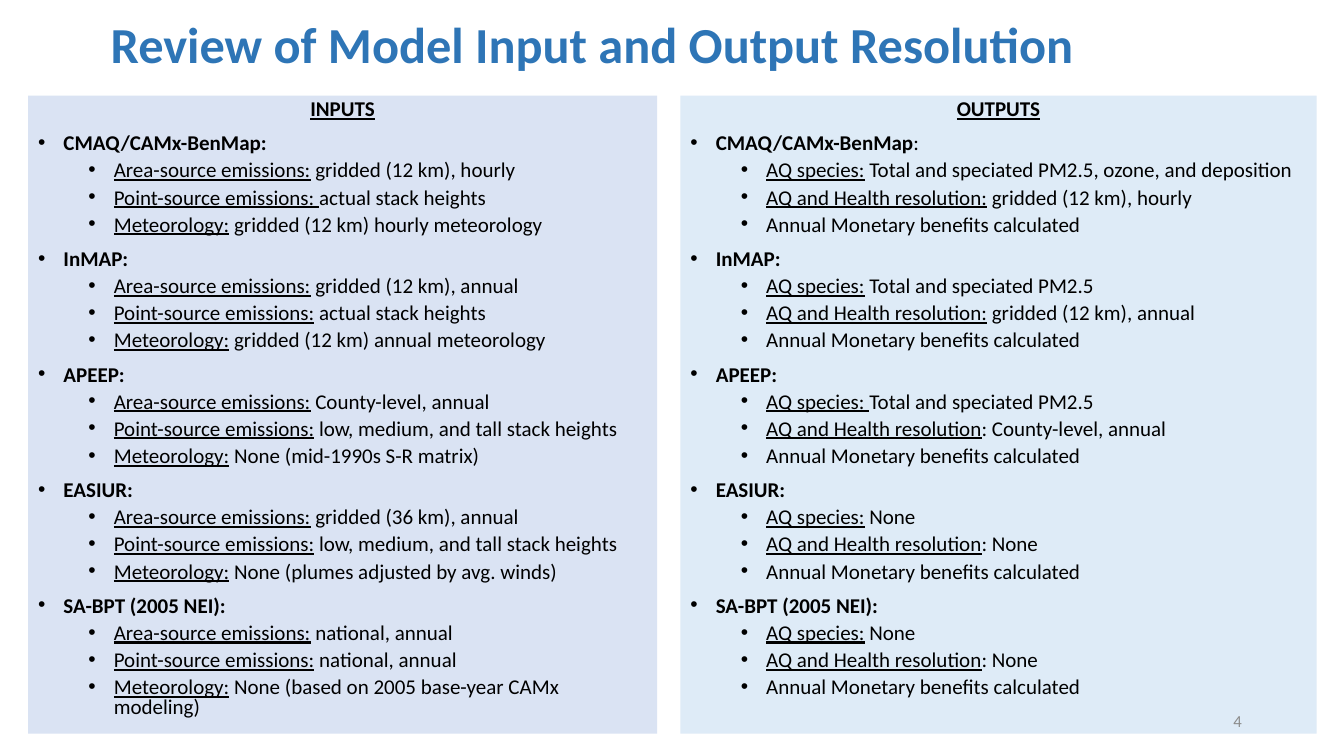
"""Build the slide that reviews model input and output resolution."""
from lxml import etree
from pptx import Presentation
from pptx.dml.color import RGBColor
from pptx.enum.shapes import MSO_SHAPE
from pptx.enum.text import MSO_ANCHOR, PP_ALIGN
from pptx.oxml.ns import qn
from pptx.util import Cm, Pt

RECT = MSO_SHAPE.RECTANGLE
TOP, MID = MSO_ANCHOR.TOP, MSO_ANCHOR.MIDDLE
LEFT, MIDST, RIGHT = PP_ALIGN.LEFT, PP_ALIGN.CENTER, PP_ALIGN.RIGHT
FONT = "Calibri"
HEX = {"title": "2E75B6", "text": "000000", "page": "8C8C8C",
       "in": "DAE3F3", "out": "DEEBF7"}


def color(name):
    return RGBColor.from_string(HEX[name])


def write(frame, text, size=15, hue="text", bold=False, under=False,
          align=LEFT, level=0, space=0, line=0.8, indent=None):
    """Add a paragraph; bold and underline end at a bar in the text."""
    par = frame.paragraphs[0]
    if par.runs:
        par = frame.add_paragraph()
    par.level = level
    if indent:
        props = par._p.get_or_add_pPr()
        props.set("marL", str(Cm(indent)))
        props.set("indent", str(-Cm(0.64)))
        etree.SubElement(props, qn("a:buFont")).set("typeface", "Arial")
        etree.SubElement(props, qn("a:buChar")).set("char", "•")
    par.alignment = align
    par.line_spacing = line
    par.space_before = Pt(space)
    for pos, part in enumerate(text.split("|")):
        run = par.add_run()
        run.text = part
        font = run.font
        font.name, font.size = FONT, Pt(size)
        font.color.rgb = color(hue)
        font.bold = bold and pos == 0
        font.underline = under and pos == 0


AREA = "Area-source emissions:| "
POINT = "Point-source emissions:| "
MET = "Meteorology:| "
AIR = "AQ species:| "
HEALTH = "AQ and Health resolution"
GAIN = "Annual Monetary benefits calculated"
TALL = POINT + "low, medium, and tall stack heights"

INPUTS = [
    ("CMAQ/CAMx-BenMap:", AREA + "gridded (12 km), hourly",
     "Point-source emissions: |actual stack heights",
     MET + "gridded (12 km) hourly meteorology"),
    ("InMAP:", AREA + "gridded (12 km), annual",
     POINT + "actual stack heights",
     MET + "gridded (12 km) annual meteorology"),
    ("APEEP:", AREA + "County-level, annual", TALL,
     MET + "None (mid-1990s S-R matrix)"),
    ("EASIUR:", AREA + "gridded (36 km), annual", TALL,
     MET + "None (plumes adjusted by avg. winds)"),
    ("SA-BPT (2005 NEI):", AREA + "national, annual",
     POINT + "national, annual",
     MET + "None (based on 2005 base-year CAMx modeling)"),
]
OUTPUTS = [
    ("CMAQ/CAMx-BenMap|:",
     AIR + "Total and speciated PM2.5, ozone, and deposition",
     HEALTH + ":| gridded (12 km), hourly", GAIN),
    ("InMAP:", AIR + "Total and speciated PM2.5",
     HEALTH + ":| gridded (12 km), annual", GAIN),
    ("APEEP:", "AQ species: |Total and speciated PM2.5",
     HEALTH + "|: County-level, annual", GAIN),
    ("EASIUR:", AIR + "None", HEALTH + "|: None", GAIN),
    ("SA-BPT (2005 NEI):", AIR + "None", HEALTH + "|: None", GAIN),
]

deck = Presentation()
deck.slide_width, deck.slide_height = Cm(33.87), Cm(19.05)
slide = deck.slides.add_slide(deck.slide_layouts[6])
shapes = slide.shapes

title = shapes.add_textbox(Cm(2.54), Cm(-0.64), Cm(29.21), Cm(3.68)).text_frame
title.word_wrap = True
title.vertical_anchor = MID
write(title, "Review of Model Input and Output Resolution", size=36,
      hue="title", bold=True, line=0.9)

for head, models, fill, left, width in (
        ("INPUTS", INPUTS, "in", 0.71, 15.85),
        ("OUTPUTS", OUTPUTS, "out", 17.15, 16.03)):
    panel = shapes.add_shape(RECT, Cm(left), Cm(2.41), Cm(width), Cm(16.08))
    panel.shadow.inherit = False
    panel.fill.solid()
    panel.fill.fore_color.rgb = color(fill)
    panel.line.fill.background()
    frame = panel.text_frame
    frame.word_wrap = True
    frame.vertical_anchor = TOP
    write(frame, head, bold=True, under=True, align=MIDST)
    for model, *facts in models:
        write(frame, model, bold=True, space=10, indent=0.64)
        for fact in facts:
            write(frame, fact, under="|" in fact, level=1, space=5,
                  indent=1.91)

page = shapes.add_textbox(Cm(23.93), Cm(17.65), Cm(7.62), Cm(1.02)).text_frame
page.word_wrap = True
page.vertical_anchor = MID
write(page, "4", size=12, hue="page", align=RIGHT, line=1.0)

deck.save("out.pptx")
